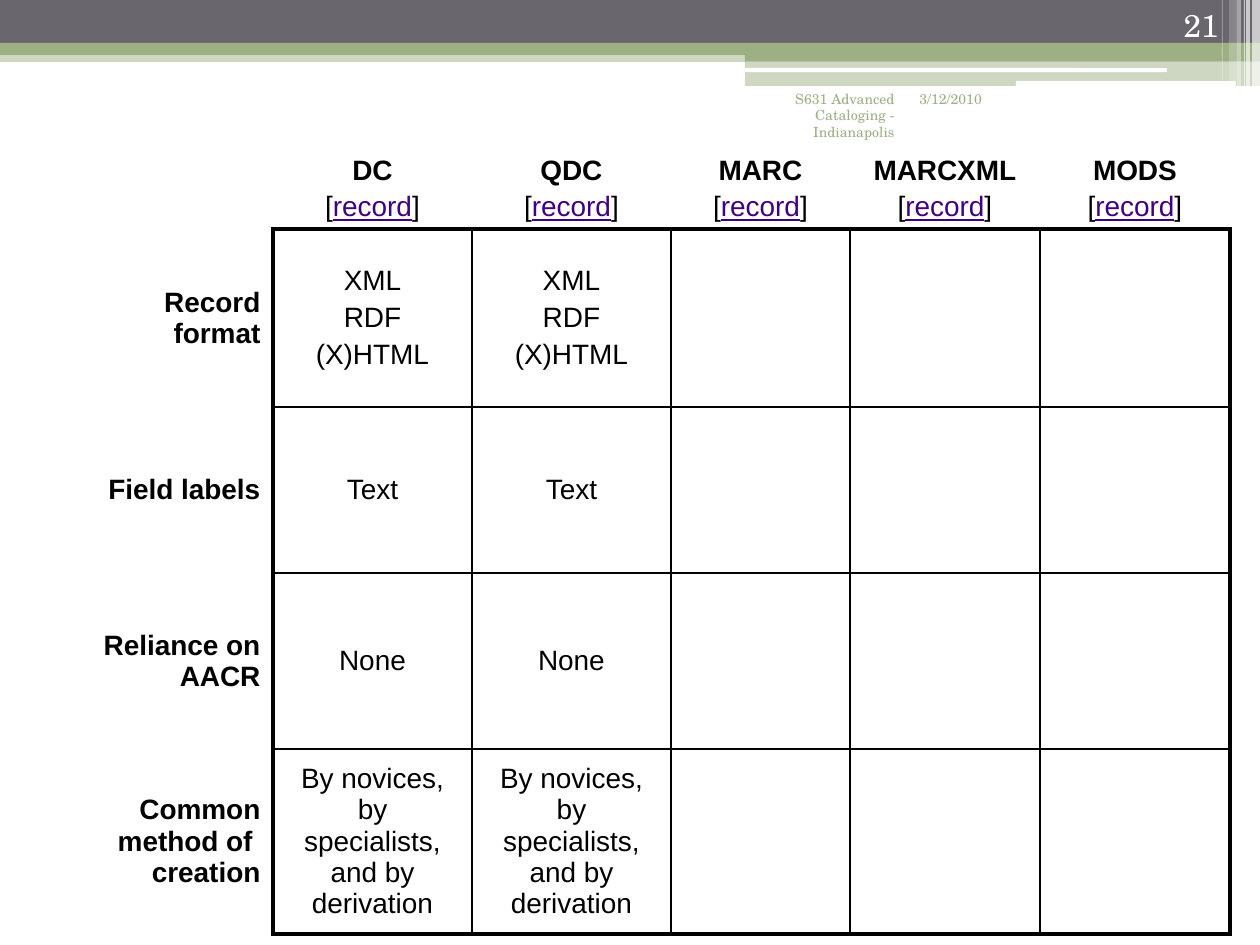
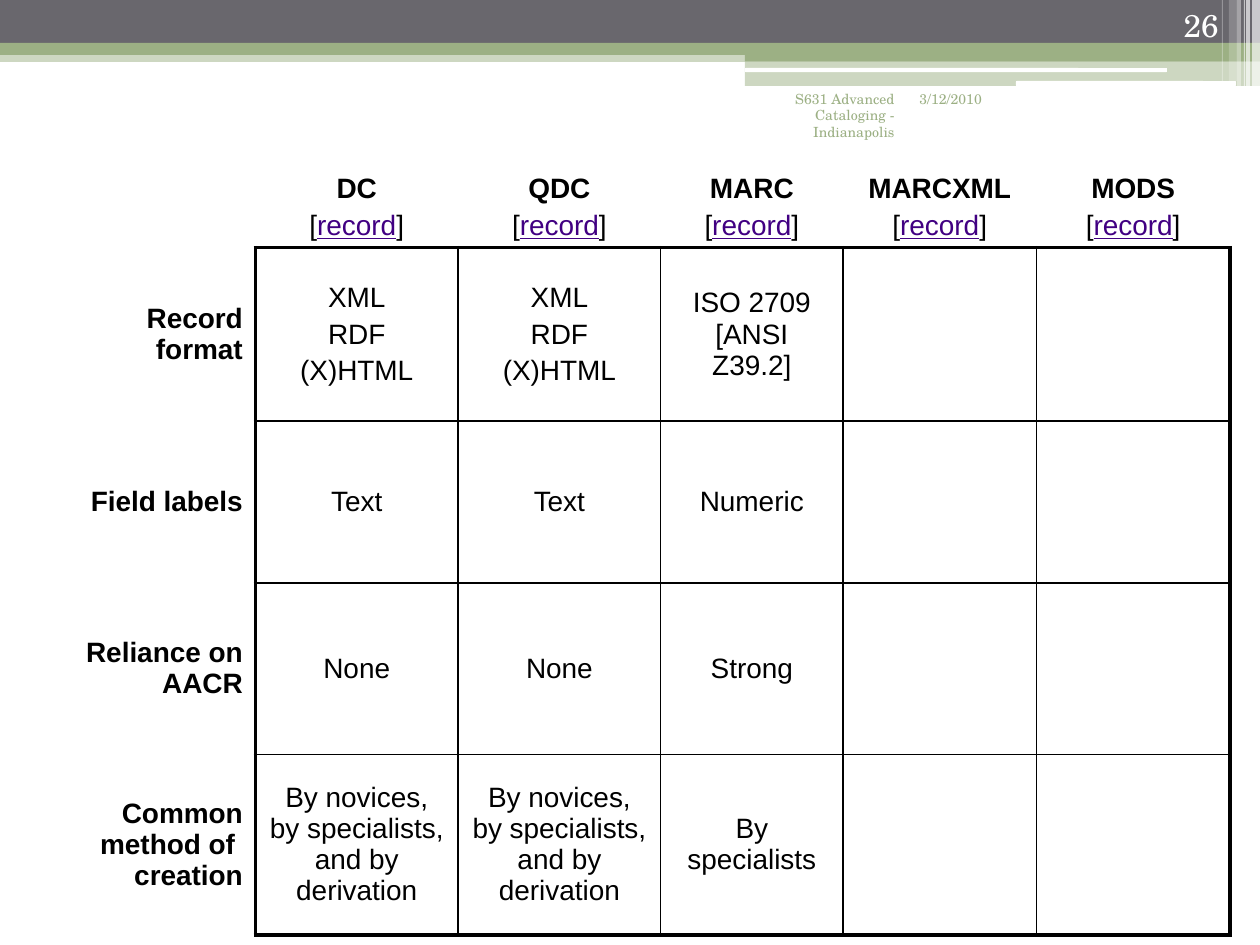
"""Builds two slides comparing metadata record formats in a growing table."""
import lxml.etree
import pptx
import pptx.dml.color
import pptx.enum.shapes
import pptx.enum.text
import pptx.oxml.ns
import pptx.util

EMU_PER_PX = 914400 / 126
COLORS = {"slate": "69676D", "green": "9CB084", "white": "FFFFFF", "black": "000000", "link": "410082"}
FONTS = {"table": "Arial", "footer": "TeX Gyre Schola"}
ALIGN = pptx.enum.text.PP_ALIGN
ANCHOR = pptx.enum.text.MSO_ANCHOR
RECTANGLE = pptx.enum.shapes.MSO_SHAPE.RECTANGLE
ROUNDED = pptx.enum.shapes.MSO_SHAPE.ROUNDED_RECTANGLE
THIN, THICK = 1, 2.25

BANDS = [
    (0, 50, 1260, 12, RECTANGLE, "green", 50),
    (0, 0, 1260, 43, RECTANGLE, "slate", 100),
    (0, 43, 1260, 12, RECTANGLE, "green", 100),
    (745, 49, 515, 12, RECTANGLE, "green", 100),
    (745, 61, 515, 25, RECTANGLE, "green", 50),
    (745, 68, 422, 4, ROUNDED, "white", 100),
    (1016, 81, 220, 5, ROUNDED, "white", 100),
]
STRIPES = [
    (1252, 8, 86, 65),
    (1246, 4, 86, 65),
    (1244, 1, 86, 60),
    (1237, 4, 86, 40),
    (1229, 8, 81, 20),
    (1222, 1, 81, 30),
]

FORMATS = ["DC", "QDC", "MARC", "MARCXML", "MODS"]
CRITERIA = ["Record format", "Field labels", "Reliance on AACR", "Common method of  creation"]
DUBLIN_CORE = [["XML", "RDF", "(X)HTML"], ["Text"], ["None"], ["By novices, by specialists, and by derivation"]]
MARC = [["ISO 2709 [ANSI Z39.2]"], ["Numeric"], ["Strong"], ["By specialists"]]
COLUMN_SHARES = [189, 199, 199, 179, 190, 190]
ROW_SHARES = [135, 178, 166, 176, 185]

SLIDES = [
    ("21", (84, 94, 1146, 840), [DUBLIN_CORE, DUBLIN_CORE]),
    ("26", (63, 116, 1167, 819), [DUBLIN_CORE, DUBLIN_CORE, MARC]),
]


def px(length):
    return pptx.util.Emu(round(length * EMU_PER_PX))


def rgb(color):
    return pptx.dml.color.RGBColor.from_string(COLORS[color])


def spread(total, shares):
    return [px(total * share / sum(shares)) for share in shares]


class Deck:
    def __init__(self, presentation):
        self.presentation = presentation
        self.slide = None

    def add_slide(self):
        self.slide = self.presentation.slides.add_slide(self.presentation.slide_layouts[6])

    def band(self, left, top, width, height, kind, color, opacity):
        shape = self.slide.shapes.add_shape(kind, px(left), px(top), px(width), px(height))
        shape.shadow.inherit = False
        shape.line.fill.background()
        shape.fill.solid()
        shape.fill.fore_color.rgb = rgb(color)
        if opacity < 100:
            fill_color = shape.fill._xPr.find(".//" + pptx.oxml.ns.qn("a:srgbClr"))
            lxml.etree.SubElement(fill_color, pptx.oxml.ns.qn("a:alpha"), val=str(opacity * 1000))

    def header_bands(self):
        for band in BANDS:
            self.band(*band)
        for left, width, height, opacity in STRIPES:
            self.band(left, 0, width, height, RECTANGLE, "white", opacity)

    def run(self, paragraph, text, size, font, color, bold=False, underline=False):
        run = paragraph.add_run()
        run.text = text
        run.font.size = pptx.util.Pt(size)
        run.font.name = FONTS[font]
        run.font.color.rgb = rgb(color)
        run.font.bold = bold
        run.font.underline = underline

    def label(self, text, left, top, width, height, size, color, align=ALIGN.LEFT, anchor=ANCHOR.TOP):
        frame = self.slide.shapes.add_textbox(px(left), px(top), px(width), px(height)).text_frame
        frame.word_wrap = True
        frame.vertical_anchor = anchor
        frame.paragraphs[0].alignment = align
        self.run(frame.paragraphs[0], text, size, "footer", color)

    def border(self, cell, side, width):
        line = lxml.etree.SubElement(cell._tc.get_or_add_tcPr(), pptx.oxml.ns.qn("a:ln" + side))
        if not width:
            lxml.etree.SubElement(line, pptx.oxml.ns.qn("a:noFill"))
            return
        line.set("w", str(pptx.util.Pt(width)))
        fill = lxml.etree.SubElement(line, pptx.oxml.ns.qn("a:solidFill"))
        lxml.etree.SubElement(fill, pptx.oxml.ns.qn("a:srgbClr"), val=COLORS["black"])

    def frame_cell(self, cell, row, column):
        last_row, last_column = len(ROW_SHARES) - 1, len(COLUMN_SHARES) - 1
        widths = dict.fromkeys("LRTB", 0)
        if row and column:
            widths = {
                "L": THICK if column == 1 else THIN,
                "R": THICK if column == last_column else THIN,
                "T": THICK if row == 1 else THIN,
                "B": THICK if row == last_row else THIN,
            }
        elif column:
            widths["B"] = THICK
        elif row:
            widths["R"] = THICK
        for side, width in widths.items():
            self.border(cell, side, width)
        cell.fill.solid()
        cell.fill.fore_color.rgb = rgb("white")

    def write_cell(self, cell, lines, align=ALIGN.CENTER, anchor=ANCHOR.MIDDLE):
        cell.vertical_anchor = anchor
        frame = cell.text_frame
        for index, runs in enumerate(lines):
            paragraph = frame.add_paragraph() if index else frame.paragraphs[0]
            paragraph.alignment = align
            paragraph.space_before = pptx.util.Pt(3.2)
            for text, color, bold, underline in runs:
                self.run(paragraph, text, 16, "table", color, bold, underline)

    def comparison_table(self, left, top, width, height, answers):
        table = self.slide.shapes.add_table(
            len(ROW_SHARES), len(COLUMN_SHARES), px(left), px(top), px(width), px(height)
        ).table
        table.first_row = table.horz_banding = False
        for column, column_width in zip(table.columns, spread(width, COLUMN_SHARES)):
            column.width = column_width
        for row, row_height in zip(table.rows, spread(height, ROW_SHARES)):
            row.height = row_height
        for row in range(len(ROW_SHARES)):
            for column in range(len(COLUMN_SHARES)):
                self.frame_cell(table.cell(row, column), row, column)

        record = [("[", "black", False, False), ("record", "link", False, True), ("]", "black", False, False)]
        for column, name in enumerate(FORMATS, 1):
            heading = [(name, "black", True, False)]
            self.write_cell(table.cell(0, column), [heading, record], anchor=ANCHOR.BOTTOM)
        for row, criterion in enumerate(CRITERIA, 1):
            self.write_cell(table.cell(row, 0), [[(criterion, "black", True, False)]], ALIGN.RIGHT)
        for column, column_answers in enumerate(answers, 1):
            for row, lines in enumerate(column_answers, 1):
                self.write_cell(table.cell(row, column), [[(line, "black", False, False)] for line in lines])

    def footers(self, number):
        self.label("3/12/2010", 907, 84, 132, 63, 8, "green")
        self.label(number, 1126, 0, 105, 50, 18, "white", ALIGN.RIGHT, ANCHOR.BOTTOM)
        self.label("S631 Advanced Cataloging - Indianapolis", 725, 84, 182, 63, 8, "green", ALIGN.RIGHT)


def main():
    presentation = pptx.Presentation()
    presentation.slide_width, presentation.slide_height = px(1260), px(945)
    deck = Deck(presentation)
    for number, table_box, answers in SLIDES:
        deck.add_slide()
        deck.header_bands()
        deck.comparison_table(*table_box, answers)
        deck.footers(number)
    presentation.save("out.pptx")


if __name__ == "__main__":
    main()
